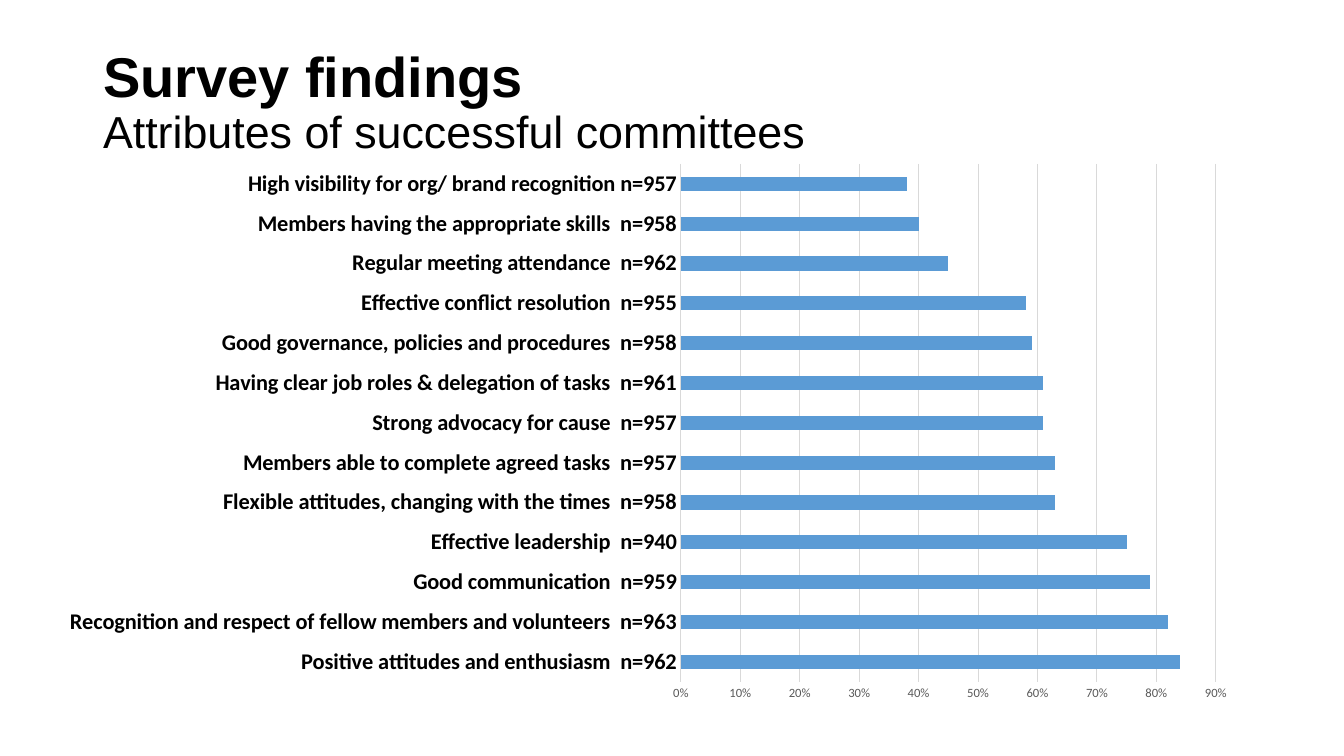
from lxml import etree
from pptx import Presentation
from pptx.chart.data import CategoryChartData
from pptx.dml.color import RGBColor
from pptx.enum.chart import XL_CHART_TYPE, XL_TICK_MARK
from pptx.enum.text import MSO_ANCHOR, PP_ALIGN
from pptx.oxml.ns import qn
from pptx.util import Emu, Pt

BAR_CLUSTERED = XL_CHART_TYPE.BAR_CLUSTERED
NO_TICK = XL_TICK_MARK.NONE
TOP, LEFT = MSO_ANCHOR.TOP, PP_ALIGN.LEFT

# Content
HEADING = "Survey findings"
SUBHEADING = "Attributes of successful committees"
ATTRIBUTES = [  # from the bottom bar up
    ("Positive attitudes and enthusiasm  n=962", 0.84),
    ("Recognition and respect of fellow members and volunteers  n=963", 0.82),
    ("Good communication  n=959", 0.79),
    ("Effective leadership  n=940", 0.75),
    ("Flexible attitudes, changing with the times  n=958", 0.63),
    ("Members able to complete agreed tasks  n=957", 0.63),
    ("Strong advocacy for cause  n=957", 0.61),
    ("Having clear job roles & delegation of tasks  n=961", 0.61),
    ("Good governance, policies and procedures  n=958", 0.59),
    ("Effective conflict resolution  n=955", 0.58),
    ("Regular meeting attendance  n=962", 0.45),
    ("Members having the appropriate skills  n=958", 0.40),
    ("High visibility for org/ brand recognition n=957", 0.38),
]

# Geometry in px: left, top, width, height
SLIDE_SIZE = (1344, 756)
TITLE_BOX = (93, 40, 1159, 146)
CHART_BOX = (46, 153, 1206, 558)
PLOT_BOX = (681, 164, 535, 518)

BLACK, GREY, GRID, BLUE = "000000", "595959", "D9D9D9", "5B9BD5"


def px(length):
    return Emu(round(length * 914400 / 100.8))


def color(value):
    return RGBColor.from_string(value)


def set_font(font, name, size, value, bold=False):
    font.name, font.size, font.bold = name, Pt(size), bold
    font.color.rgb = color(value)


def set_line(line, value):
    line.color.rgb = color(value)
    line.width = Pt(0.75)


def place_plot(chart):
    """Fix the inner plot area as fractions of the chart frame."""
    left, top, width, height = CHART_BOX
    fractions = {
        "x": (PLOT_BOX[0] - left) / width,
        "y": (PLOT_BOX[1] - top) / height,
        "w": PLOT_BOX[2] / width,
        "h": PLOT_BOX[3] / height,
    }
    plot_area = chart.element.find(".//" + qn("c:plotArea"))
    layout = plot_area.find(qn("c:layout"))
    if layout is None:
        layout = etree.Element(qn("c:layout"))
        plot_area.insert(0, layout)
    manual = etree.SubElement(layout, qn("c:manualLayout"))
    settings = [("layoutTarget", "inner"), ("xMode", "edge"), ("yMode", "edge")]
    settings += [(key, f"{value:.4f}") for key, value in fractions.items()]
    for tag, value in settings:
        etree.SubElement(manual, qn("c:" + tag)).set("val", value)


presentation = Presentation()
presentation.slide_width, presentation.slide_height = map(px, SLIDE_SIZE)
slide = presentation.slides.add_slide(presentation.slide_layouts[5])

# Title
title = slide.shapes.title
title.left, title.top, title.width, title.height = map(px, TITLE_BOX)
frame = title.text_frame
frame.word_wrap = True
frame.vertical_anchor = TOP
frame.margin_top = px(9)
paragraph = frame.paragraphs[0]
paragraph.alignment = LEFT
paragraph.line_spacing = 0.9
heading = paragraph.add_run()
heading.text = HEADING
set_font(heading.font, "Arial", 40, BLACK, bold=True)
paragraph.add_line_break()
subheading = paragraph.add_run()
subheading.text = SUBHEADING
set_font(subheading.font, "Arial", 32, BLACK)

# Bar chart
chart_data = CategoryChartData(number_format="###0%")
chart_data.categories = [label for label, share in ATTRIBUTES]
chart_data.add_series("Series 1", [share for label, share in ATTRIBUTES])
chart = slide.shapes.add_chart(BAR_CLUSTERED, *map(px, CHART_BOX), chart_data).chart
chart.has_title = chart.has_legend = False
set_font(chart.font, "Calibri", 10, BLACK)
place_plot(chart)

plot = chart.plots[0]
plot.gap_width = 182
plot.vary_by_categories = False
bars = plot.series[0].format.fill
bars.solid()
bars.fore_color.rgb = color(BLUE)

# Axes
category_axis, value_axis = chart.category_axis, chart.value_axis
for axis in (category_axis, value_axis):
    axis.major_tick_mark = axis.minor_tick_mark = NO_TICK
set_font(category_axis.tick_labels.font, "Calibri", 16, BLACK, bold=True)
set_line(category_axis.format.line, GRID)
set_font(value_axis.tick_labels.font, "Calibri", 9, GREY)
value_axis.tick_labels.number_format = "###0%"
value_axis.tick_labels.number_format_is_linked = False
value_axis.minimum_scale, value_axis.maximum_scale = 0, 0.9
value_axis.major_unit = 0.1
value_axis.format.line.fill.background()
value_axis.has_major_gridlines = True
set_line(value_axis.major_gridlines.format.line, GRID)

presentation.save("out.pptx")
